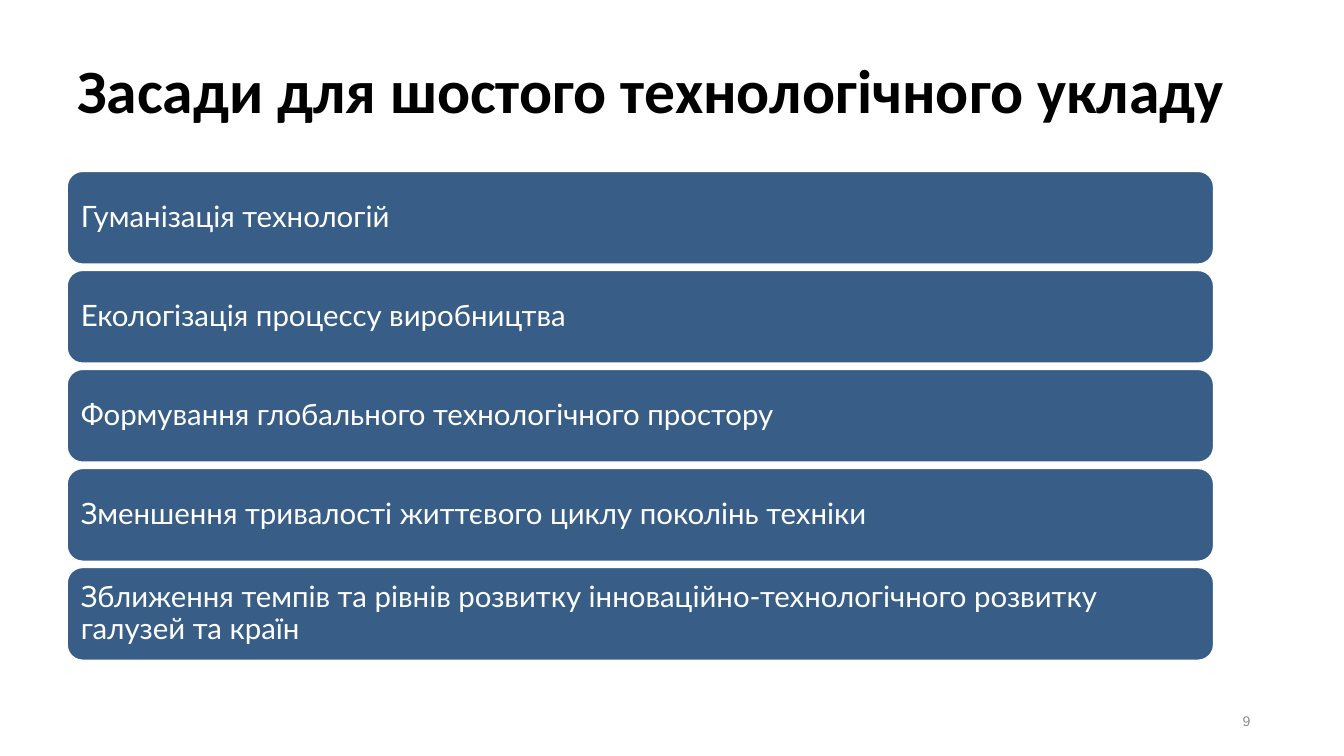
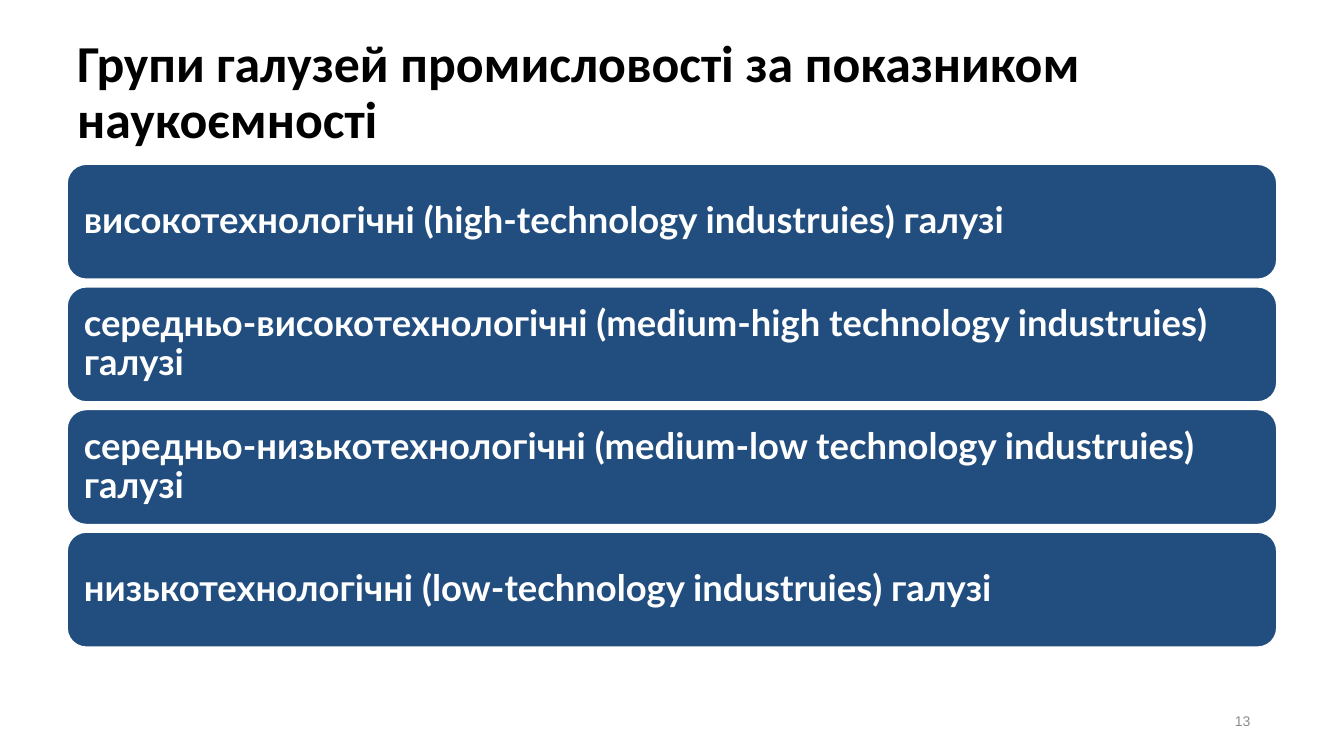
import pptx
import pptx.util
import pptx.dml.color
import pptx.enum.shapes
import pptx.enum.text

Inches = pptx.util.Inches
RGBColor = pptx.dml.color.RGBColor
ALIGN = pptx.enum.text.PP_ALIGN

WHITE = RGBColor(0xFF, 0xFF, 0xFF)
BLACK = RGBColor(0x00, 0x00, 0x00)
GREY = RGBColor(0x8C, 0x8C, 0x8C)
STEEL = RGBColor(0x38, 0x5E, 0x88)
NAVY = RGBColor(0x22, 0x4E, 0x7F)

WIDTH, HEIGHT = Inches(13.33), Inches(7.5)
MARGIN = int(WIDTH * 0.05)
CONTENT_WIDTH = WIDTH - 2 * MARGIN

# Each topic: heading, page number and the look of its stack of bars
TOPICS = [
    dict(
        heading="Засади для шостого технологічного укладу", heading_size=44, page="9",
        color=STEEL, size=21, bold=False, inset=0.09,
        top=1.7, bottom=6.55, bar_height=0.92, bar_width=Inches(11.37),
        items=[
            "Гуманізація технологій",
            "Екологізація процессу виробництва",
            "Формування глобального технологічного простору",
            "Зменшення тривалості життєвого циклу поколінь техніки",
            "Зближення темпів та рівнів розвитку інноваційно-технологічного розвитку галузей та країн",
        ],
    ),
    dict(
        heading="Групи галузей промисловості за показником наукоємності", heading_size=37, page="13",
        color=NAVY, size=26, bold=True, inset=0.11,
        top=1.63, bottom=6.42, bar_height=1.14, bar_width=CONTENT_WIDTH,
        items=[
            "високотехнологічні (high-technology industruies) галузі",
            "середньо-високотехнологічні (medium-high technology industruies) галузі",
            "середньо-низькотехнологічні (medium-low technology industruies) галузі",
            "низькотехнологічні (low-technology industruies) галузі",
        ],
    ),
]


def write(shape, text, font, size, color, bold=False, align=ALIGN.LEFT, spacing=0.9):
    """Put one vertically centred paragraph into a shape."""
    frame = shape.text_frame
    frame.word_wrap = True
    frame.vertical_anchor = pptx.enum.text.MSO_ANCHOR.MIDDLE
    paragraph = frame.paragraphs[0]
    paragraph.text = text
    paragraph.alignment = align
    paragraph.line_spacing = spacing
    paragraph.font.name = font
    paragraph.font.size = pptx.util.Pt(size)
    paragraph.font.bold = bold
    paragraph.font.color.rgb = color
    return frame


deck = pptx.Presentation()
deck.slide_width, deck.slide_height = WIDTH, HEIGHT

for topic in TOPICS:
    slide = deck.slides.add_slide(deck.slide_layouts[6])

    # Heading
    heading = slide.shapes.add_textbox(MARGIN, int(HEIGHT * 0.04), CONTENT_WIDTH, Inches(1.25))
    write(heading, topic["heading"], "Calibri", topic["heading_size"], BLACK, bold=True)

    # Page number
    page = slide.shapes.add_textbox(Inches(9.42), Inches(6.95), Inches(3.08), Inches(0.4))
    write(page, topic["page"], "Arial", 10, GREY, align=ALIGN.RIGHT, spacing=1.0)

    # Stack of bars, evenly spread between top and bottom
    items, bar_height = topic["items"], topic["bar_height"]
    pitch = (topic["bottom"] - topic["top"] - bar_height) / (len(items) - 1)
    for row, item in enumerate(items):
        bar = slide.shapes.add_shape(
            pptx.enum.shapes.MSO_SHAPE.ROUNDED_RECTANGLE,
            MARGIN, Inches(topic["top"] + row * pitch), topic["bar_width"], Inches(bar_height))
        bar.shadow.inherit = False
        bar.fill.solid()
        bar.fill.fore_color.rgb = topic["color"]
        bar.line.color.rgb = WHITE
        bar.line.width = pptx.util.Pt(1)
        frame = write(bar, item, "Lato", topic["size"], WHITE, bold=topic["bold"])
        frame.margin_left = frame.margin_right = Inches(topic["inset"])
        frame.margin_top = frame.margin_bottom = Inches(topic["inset"])

deck.save("out.pptx")
